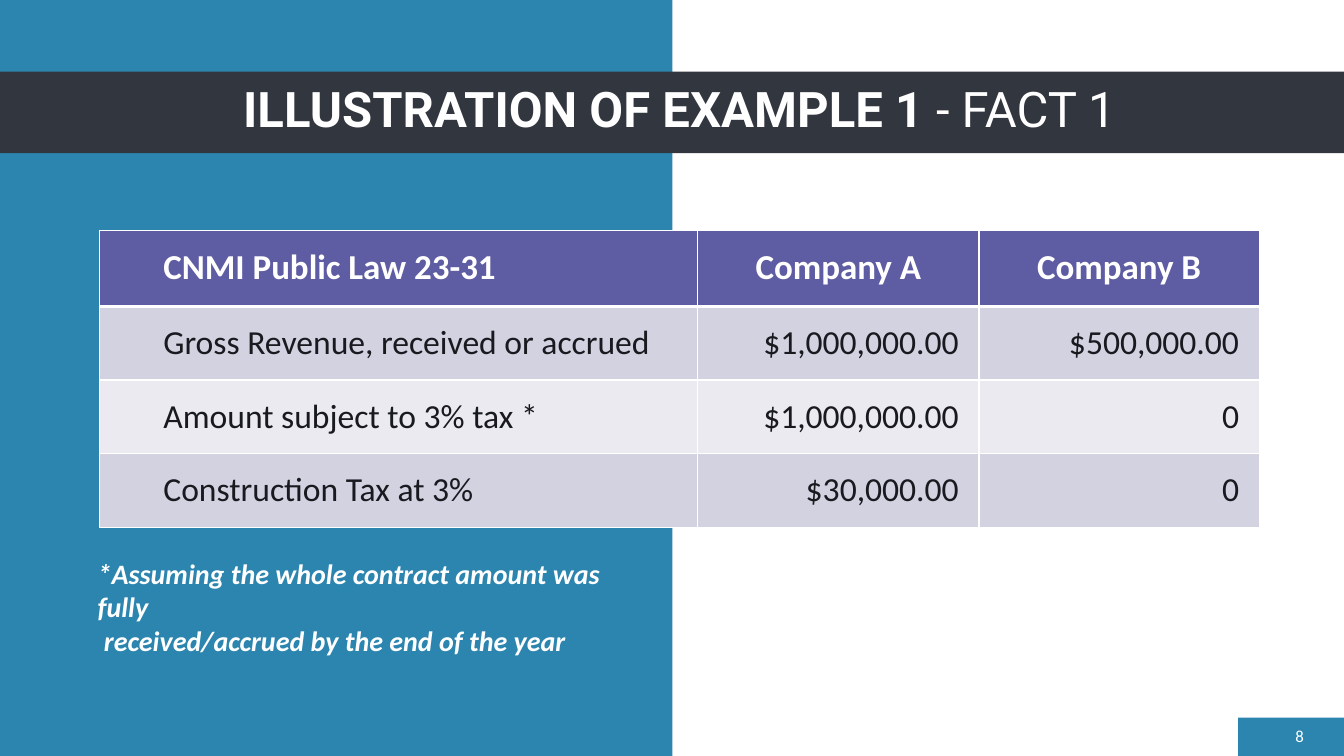
from dataclasses import dataclass, field
from typing import Any

from lxml import etree
from pptx import Presentation
from pptx.dml import color
from pptx.enum import shapes, text
from pptx.oxml import ns
from pptx.util import Inches, Pt

COLORS: dict[str, str] = {
    "blue": "2C85AE",
    "slate": "32363F",
    "white": "FFFFFF",
    "ink": "181A1F",
    "header": "5E5CA2",
    "dark_row": "D2D2E0",
    "light_row": "EAEAF0",
}
LEFT, CENTER, RIGHT = text.PP_ALIGN.LEFT, text.PP_ALIGN.CENTER, text.PP_ALIGN.RIGHT
MIDDLE = text.MSO_ANCHOR.MIDDLE


@dataclass
class Box:
    x: float
    y: float
    w: float
    h: float

    def lengths(self) -> list[int]:
        return [Inches(v) for v in (self.x, self.y, self.w, self.h)]


@dataclass
class Band:
    box: Box
    color: str


@dataclass
class Style:
    size: float
    color: str = "white"
    format: dict[str, Any] = field(default_factory=dict)


BANDS = [
    Band(Box(12.28, 7.12, 1.05, 0.38), "blue"),
    Band(Box(0, 0, 6.67, 7.5), "blue"),
    Band(Box(0, 0.71, 13.33, 0.81), "slate"),
]
ROWS = [
    ("CNMI Public Law 23-31", "Company A", "Company B"),
    ("Gross Revenue, received or accrued", "$1,000,000.00", "$500,000.00"),
    ("Amount subject to 3% tax *", "$1,000,000.00", "0"),
    ("Construction Tax at 3%", "$30,000.00", "0"),
]
COL_WIDTHS = (5.93, 2.79, 2.78)
ROW_HEIGHTS = (0.75, 0.73, 0.73, 0.73)
NOTE = [
    "*Assuming the whole contract amount was fully",
    " received/accrued by the end of the year",
]


def rgb(name: str) -> color.RGBColor:
    return color.RGBColor.from_string(COLORS[name])


def set_attrs(obj: Any, values: dict[str, Any]) -> None:
    for name, value in values.items():
        setattr(obj, name, value)


def add_run(p: Any, words: str, style: Style) -> None:
    r = p.add_run()
    r.text = words
    set_attrs(r.font, {"name": "Calibri", "size": Pt(style.size), **style.format})
    r.font.color.rgb = rgb(style.color)


def add_band(s: Any, band: Band) -> None:
    sp = s.shapes.add_shape(shapes.MSO_SHAPE.RECTANGLE, *band.box.lengths())
    sp.shadow.inherit = False
    sp.fill.solid()
    sp.fill.fore_color.rgb = rgb(band.color)
    sp.line.fill.background()


def add_text(s: Any, box: Box, lines: list[str], style: Style,
             frame: dict[str, Any], para: dict[str, Any]) -> None:
    tf = s.shapes.add_textbox(*box.lengths()).text_frame
    set_attrs(tf, {"word_wrap": True, **frame})
    for i, line in enumerate(lines):
        p = tf.add_paragraph() if i else tf.paragraphs[0]
        set_attrs(p, para)
        add_run(p, line, style)


def add_borders(cell: Any, widths: dict[str, float]) -> None:
    tc_pr = cell._tc.get_or_add_tcPr()
    for side, width in widths.items():
        ln = etree.SubElement(tc_pr, ns.qn(f"a:ln{side}"), w=str(Pt(width)))
        fill = etree.SubElement(ln, ns.qn("a:solidFill"))
        etree.SubElement(fill, ns.qn("a:srgbClr"), val=COLORS["white"])


def fill_cell(cell: Any, words: str, row: int, col: int) -> None:
    add_borders(cell, {"L": 1, "R": 1, "T": 3 if row == 1 else 1,
                       "B": 3 if row == 0 else 1})
    if row == 0:
        back, style = "header", Style(25, "white", {"bold": True})
    else:
        back = "dark_row" if row % 2 else "light_row"
        style = Style(24, "ink", {"bold": False})
    cell.fill.solid()
    cell.fill.fore_color.rgb = rgb(back)
    set_attrs(cell, {
        "vertical_anchor": MIDDLE,
        "margin_left": Inches(0.2 if col else 0.63),
        "margin_top": Inches(0.2),
        "margin_right": Inches(0.2),
        "margin_bottom": Inches(0.1),
    })
    p = cell.text_frame.paragraphs[0]
    align = LEFT if col == 0 else CENTER if row == 0 else RIGHT
    set_attrs(p, {"alignment": align, "line_spacing": Pt(21.8)})
    add_run(p, words, style)


def add_tax_table(s: Any) -> None:
    box = Box(0.99, 2.29, sum(COL_WIDTHS), sum(ROW_HEIGHTS))
    table = s.shapes.add_table(len(ROWS), len(COL_WIDTHS), *box.lengths()).table
    for column, width in zip(table.columns, COL_WIDTHS):
        column.width = Inches(width)
    for row, height in zip(table.rows, ROW_HEIGHTS):
        row.height = Inches(height)
    for i, row_words in enumerate(ROWS):
        for j, words in enumerate(row_words):
            fill_cell(table.cell(i, j), words, i, j)


def set_title(s: Any) -> None:
    title = s.shapes.title
    # Bring the title in front of its band
    s.shapes.element.append(title.element)
    place = zip(("left", "top", "width", "height"),
                Box(0.61, 0.7, 12.26, 0.81).lengths())
    set_attrs(title, dict(place))
    tf = title.text_frame
    set_attrs(tf, {"vertical_anchor": MIDDLE, "word_wrap": True,
                   "auto_size": text.MSO_AUTO_SIZE.NONE})
    p = tf.paragraphs[0]
    set_attrs(p, {"alignment": CENTER, "line_spacing": 0.9})
    for words, bold in (("ILLUSTRATION OF EXAMPLE 1", True), (" - FACT 1", False)):
        add_run(p, words, Style(35, "white", {"name": "Roboto", "bold": bold}))


def main() -> None:
    prs = Presentation()
    set_attrs(prs, {"slide_width": Inches(13.33), "slide_height": Inches(7.5)})
    s = prs.slides.add_slide(prs.slide_layouts[5])

    # Background bands and title
    for band in BANDS:
        add_band(s, band)
    set_title(s)

    # Slide number
    add_text(s, Box(10.03, 7.1, 3, 0.4), ["8"], Style(12),
             {"vertical_anchor": MIDDLE}, {"alignment": RIGHT, "space_after": Pt(6)})

    # Tax comparison and its footnote
    add_tax_table(s)
    add_text(s, Box(0.87, 5.47, 5.59, 0.77), NOTE,
             Style(20, "white", {"bold": True, "italic": True}),
             {"auto_size": text.MSO_AUTO_SIZE.SHAPE_TO_FIT_TEXT}, {"alignment": LEFT})

    prs.save("out.pptx")


if __name__ == "__main__":
    main()
